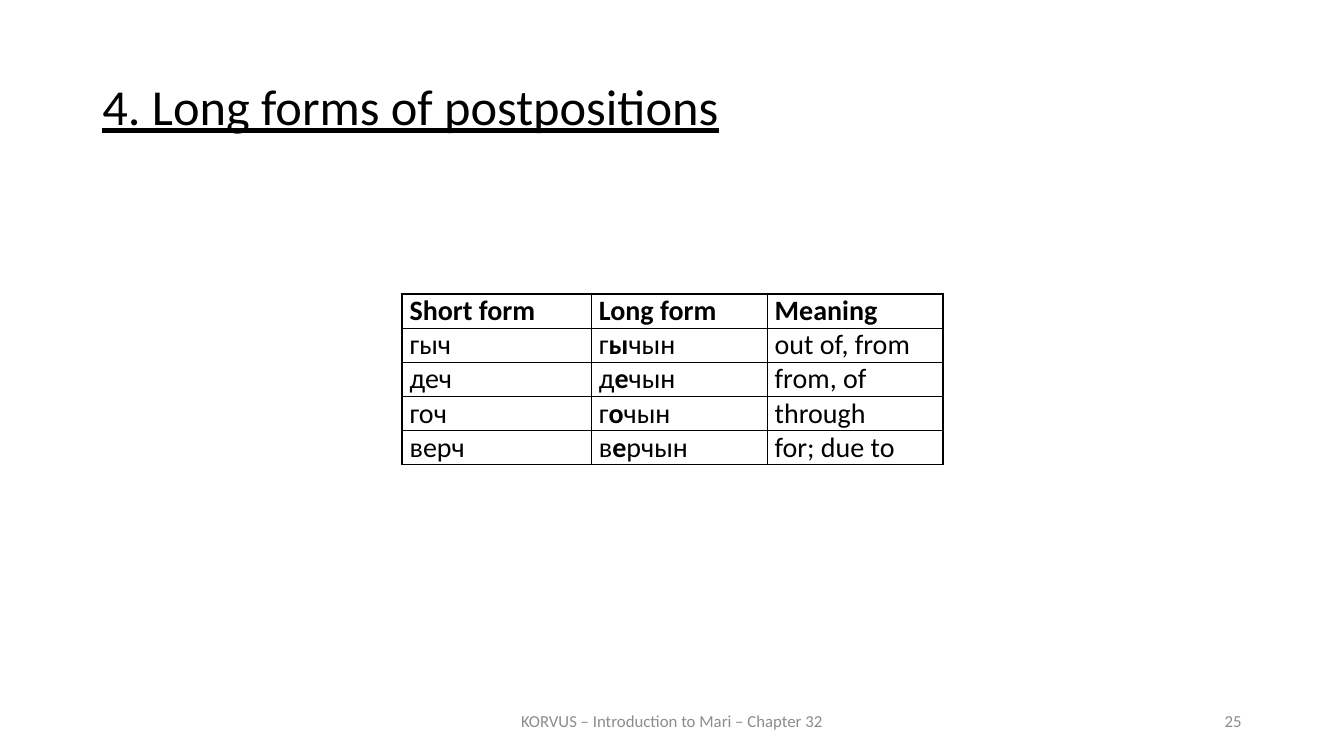
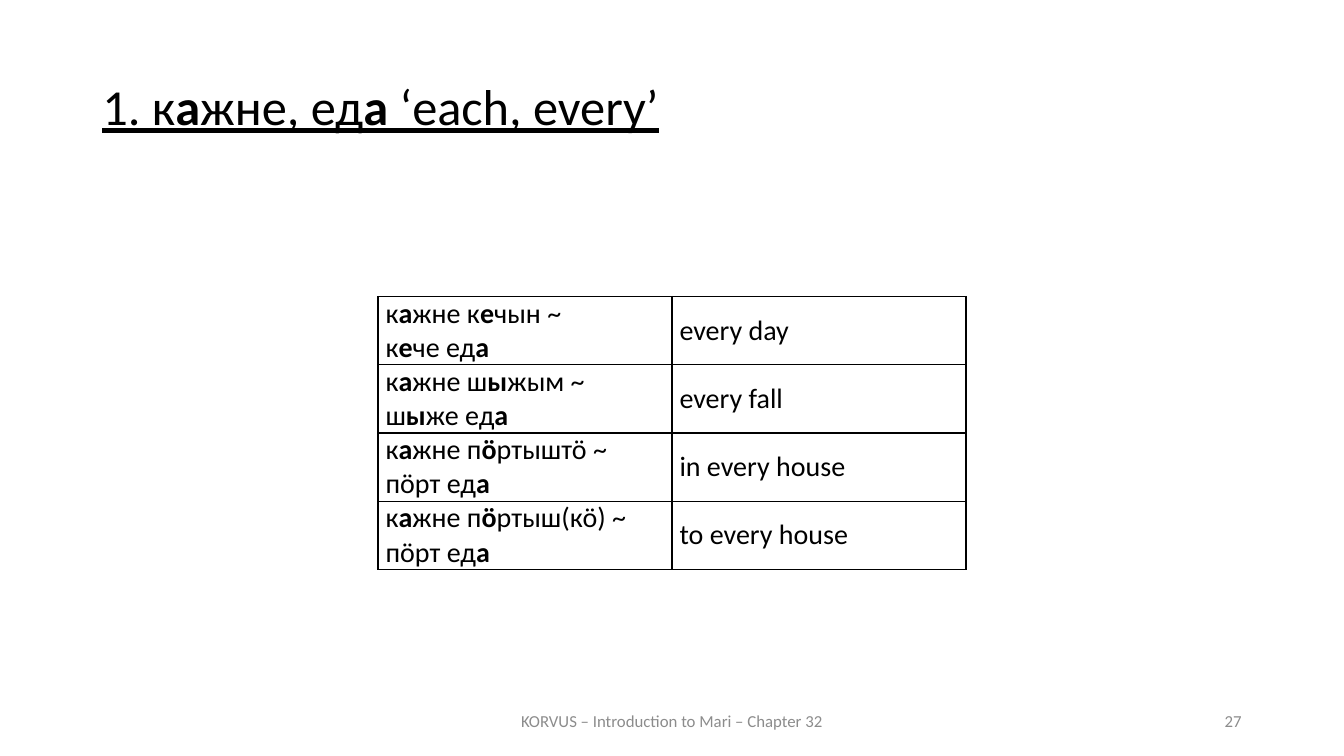
import pptx
import pptx.util
import pptx.dml.color
import pptx.enum.text
import pptx.oxml
import pptx.oxml.ns
import lxml.etree

Pt = pptx.util.Pt
RGB = pptx.dml.color.RGBColor
ALIGN = pptx.enum.text.PP_ALIGN
ANCHOR = pptx.enum.text.MSO_ANCHOR

FONT = "Calibri"
BLACK = RGB(0x00, 0x00, 0x00)
GREY = RGB(0x8C, 0x8C, 0x8C)
LINE = 24.4  # height of one line of table text
FOOT = "KORVUS – Introduction to Mari – Chapter 32"

# Content: asterisks enclose bold letters, a line break starts a paragraph
SLIDES = [
    {
        "title": "4. Long forms of postpositions",
        "page": 25,
        "left": 287.2, "top": 210, "cols": [135.2, 125.6, 125.6],
        "lines": 1,
        "style": {"align": ALIGN.JUSTIFY},
        "rows": [
            ("*Short form*", "*Long form*", "*Meaning*"),
            ("гыч", "г*ы*чын", "out of, from"),
            ("деч", "д*е*чын", "from, of"),
            ("гоч", "г*о*чын", "through"),
            ("верч", "в*е*рчын", "for; due to"),
        ],
    },
    {
        "title": "1. к*а*жне, ед*а* ‘each, every’",
        "page": 27,
        "left": 270, "top": 211.7, "cols": [210, 210],
        "lines": 2,
        "style": {"anchor": ANCHOR.MIDDLE},
        "rows": [
            ("к*а*жне к*е*чын ~\nк*е*че ед*а*", "every day"),
            ("к*а*жне ш*ы*жым ~\nш*ы*же ед*а*", "every fall"),
            ("к*а*жне п*ӧ*ртыштӧ ~\nпӧрт ед*а*", "in every house"),
            ("к*а*жне п*ӧ*ртыш(кӧ) ~\nпӧрт ед*а*", "to every house"),
        ],
    },
]


def write(frame, text, size=20, color=BLACK, align=ALIGN.LEFT, under=False,
          space=None, before=None):
    """Fill a text frame, switching bold at each asterisk."""
    frame.word_wrap = True
    for i, line in enumerate(text.split("\n")):
        para = frame.add_paragraph() if i else frame.paragraphs[0]
        para.alignment = align
        if space:
            para.line_spacing = space
        if before:
            para.space_before = Pt(before)
        for j, part in enumerate(line.split("*")):
            if part:
                run = para.add_run()
                run.text = part
                font = run.font
                font.name, font.size, font.bold = FONT, Pt(size), j % 2 == 1
                font.underline = under
                font.color.rgb = color


def add_text(slide, box, text, anchor=ANCHOR.TOP, **style):
    frame = slide.shapes.add_textbox(*map(Pt, box)).text_frame
    frame.vertical_anchor = anchor
    write(frame, text, **style)


def add_edges(cell):
    """Draw a thin black line on all four sides, ahead of the fill."""
    props = cell._tc.get_or_add_tcPr()
    for i, side in enumerate(("lnL", "lnR", "lnT", "lnB")):
        edge = pptx.oxml.parse_xml(
            f'<a:{side} {pptx.oxml.ns.nsdecls("a")} w="{Pt(1)}">'
            f'<a:solidFill><a:srgbClr val="{BLACK}"/></a:solidFill></a:{side}>')
        props.insert(i, edge)


def add_grid(slide, left, top, cols, lines, rows, style):
    high = LINE * lines
    table = slide.shapes.add_table(
        len(rows), len(cols), Pt(left), Pt(top),
        Pt(sum(cols)), Pt(high * len(rows))).table
    table.first_row = table.horz_banding = False
    for col, width in zip(table.columns, cols):
        col.width = Pt(width)
    look = dict(style)
    anchor = look.pop("anchor", ANCHOR.TOP)
    for row, texts in zip(table.rows, rows):
        row.height = Pt(high)
        for cell, text in zip(row.cells, texts):
            cell.margin_left = cell.margin_right = Pt(5.4)
            cell.margin_top = cell.margin_bottom = 0
            cell.vertical_anchor = anchor
            cell.fill.background()
            add_edges(cell)
            write(cell.text_frame, text, **look)


def add_frame(slide, title, page):
    """Title, footer and page number, the same on every slide."""
    add_text(slide, (66, 54.7, 828, 60), title, size=36, under=True,
             align=ALIGN.JUSTIFY, space=0.9, before=12)
    foot = {"size": 12, "color": GREY, "anchor": ANCHOR.MIDDLE}
    add_text(slide, (318, 500.5, 324, 28.8), FOOT, align=ALIGN.CENTER, **foot)
    add_text(slide, (678, 500.5, 216, 28.8), str(page), align=ALIGN.RIGHT, **foot)


def main():
    deck = pptx.Presentation()
    deck.slide_width, deck.slide_height = Pt(960), Pt(540)
    for item in SLIDES:
        slide = deck.slides.add_slide(deck.slide_layouts[6])
        add_frame(slide, item["title"], item["page"])
        add_grid(slide, item["left"], item["top"], item["cols"],
                 item["lines"], item["rows"], item["style"])
    deck.save("out.pptx")


if __name__ == "__main__":
    main()
